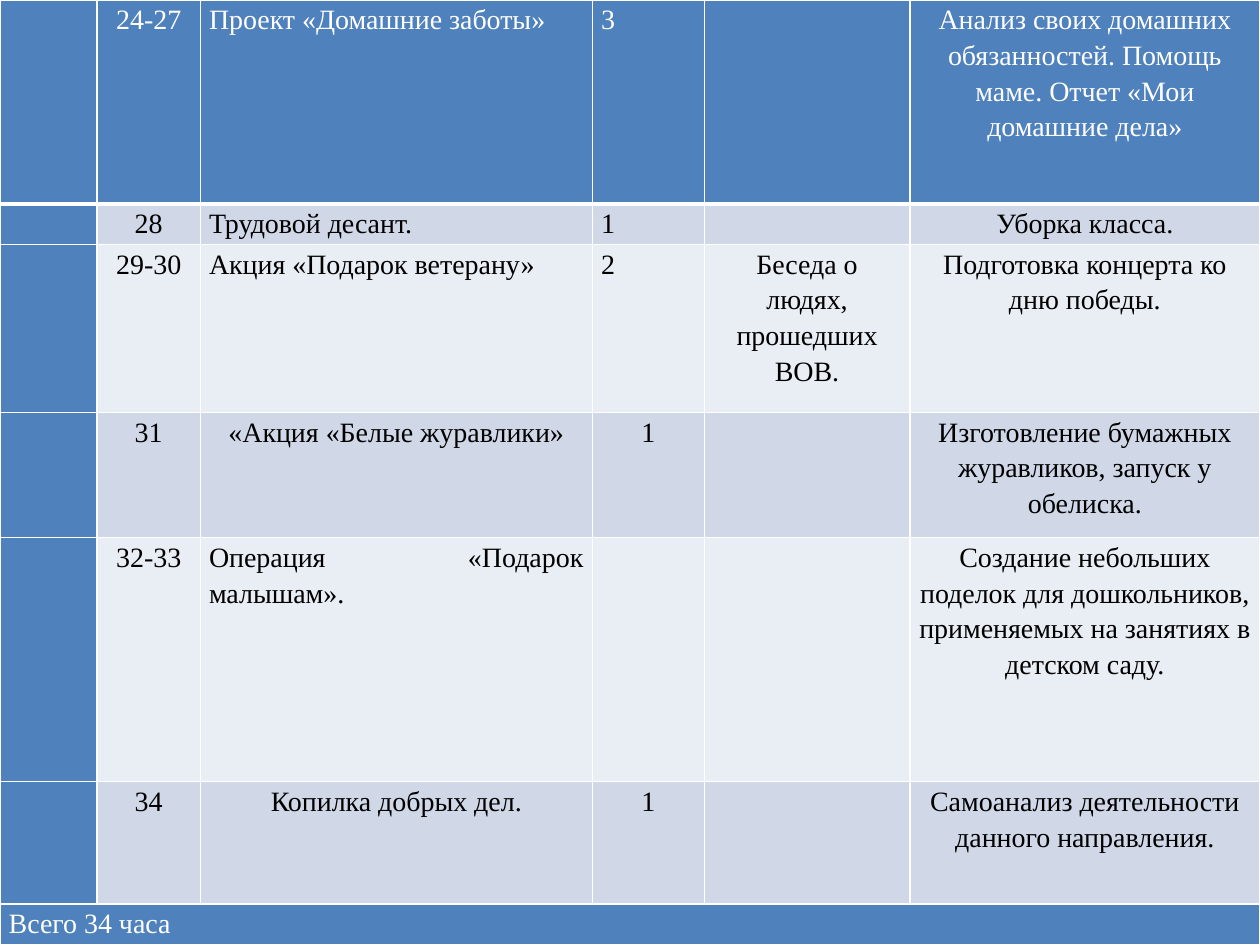
from pptx import Presentation
from pptx.dml.color import RGBColor
from pptx.enum.text import PP_ALIGN
from pptx.oxml.ns import qn
from pptx.util import Pt
from lxml import etree

CENTER, JUSTIFY, LEFT = PP_ALIGN.CENTER, PP_ALIGN.JUSTIFY, PP_ALIGN.LEFT

THEME = {
    "font": "Times New Roman",
    "size": 16,
    "accent": "4F81BD",
    "bands": ("D0D8E8", "E9EDF4"),
    "light": "FFFFFF",
    "dark": "000000",
}

# Alignment of the topic and hours, then: lessons, topic, hours, theory, practice
LESSONS = [
    (JUSTIFY, "24-27", "Проект «Домашние заботы»", "3", "",
     "Анализ своих домашних обязанностей. Помощь маме. Отчет «Мои домашние дела»"),
    (JUSTIFY, "28", "Трудовой десант.", "1", "", "Уборка класса."),
    (JUSTIFY, "29-30", "Акция «Подарок ветерану»", "2",
     "Беседа о людях, прошедших ВОВ.", "Подготовка концерта ко дню победы."),
    (CENTER, "31", "«Акция «Белые журавлики»", "1", "",
     "Изготовление бумажных журавликов, запуск у обелиска."),
    (JUSTIFY, "32-33", "Операция «Подарок малышам».", "", "",
     "Создание небольших поделок для дошкольников, применяемых на занятиях в детском саду."),
    (CENTER, "34", "Копилка добрых дел.", "1", "",
     "Самоанализ деятельности данного направления."),
]
TOTAL = "Всего 34 часа"

COLUMN_WIDTHS = (55.5, 59, 224, 64, 117.5, 200)
ROW_HEIGHTS = (116.5, 23.25, 96, 71.5, 139.5, 70, 23.25)
TOPIC, HOURS = 2, 3
SIDE_INSET = 5


def set_borders(cell, top, bottom):
    tc_pr = cell._tc.get_or_add_tcPr()
    for side, width in (("L", 1), ("R", 1), ("T", top), ("B", bottom)):
        line = etree.SubElement(tc_pr, qn(f"a:ln{side}"), w=str(Pt(width)))
        fill = etree.SubElement(line, qn("a:solidFill"))
        etree.SubElement(fill, qn("a:srgbClr"), val=THEME["light"])


def style_cell(cell, text, fill, color, align, top=1, bottom=1):
    set_borders(cell, top, bottom)
    cell.fill.solid()
    cell.fill.fore_color.rgb = RGBColor.from_string(fill)
    cell.margin_left = cell.margin_right = Pt(SIDE_INSET)
    cell.margin_top = cell.margin_bottom = 0
    if not text:
        return
    cell.text_frame.text = text
    p = cell.text_frame.paragraphs[0]
    p.alignment = align
    p.line_spacing = 1.15
    font = p.runs[0].font
    font.name = THEME["font"]
    font.size = Pt(THEME["size"])
    font.bold = False
    font.color.rgb = RGBColor.from_string(color)


prs = Presentation()
prs.slide_width, prs.slide_height = Pt(720), Pt(540)
s = prs.slides.add_slide(prs.slide_layouts[6])
table = s.shapes.add_table(len(ROW_HEIGHTS), len(COLUMN_WIDTHS), 0, 0,
                           prs.slide_width, prs.slide_height).table
for column, width in zip(table.columns, COLUMN_WIDTHS):
    column.width = Pt(width)
for row, height in zip(table.rows, ROW_HEIGHTS):
    row.height = Pt(height)

for r, (align, *texts) in enumerate(LESSONS):
    for c, text in enumerate(["", *texts]):
        accented = r == 0 or c == 0
        style_cell(
            table.cell(r, c), text,
            THEME["accent"] if accented else THEME["bands"][(r - 1) % 2],
            THEME["light"] if accented else THEME["dark"],
            align if c in (TOPIC, HOURS) else CENTER,
            top=3 if r == 1 else 1,
            bottom=3 if r == 0 else 1,
        )

last = len(LESSONS)
for c in range(len(COLUMN_WIDTHS)):
    style_cell(table.cell(last, c), "" if c else TOTAL,
               THEME["accent"], THEME["light"], LEFT)
table.cell(last, 0).merge(table.cell(last, len(COLUMN_WIDTHS) - 1))

prs.save("out.pptx")
